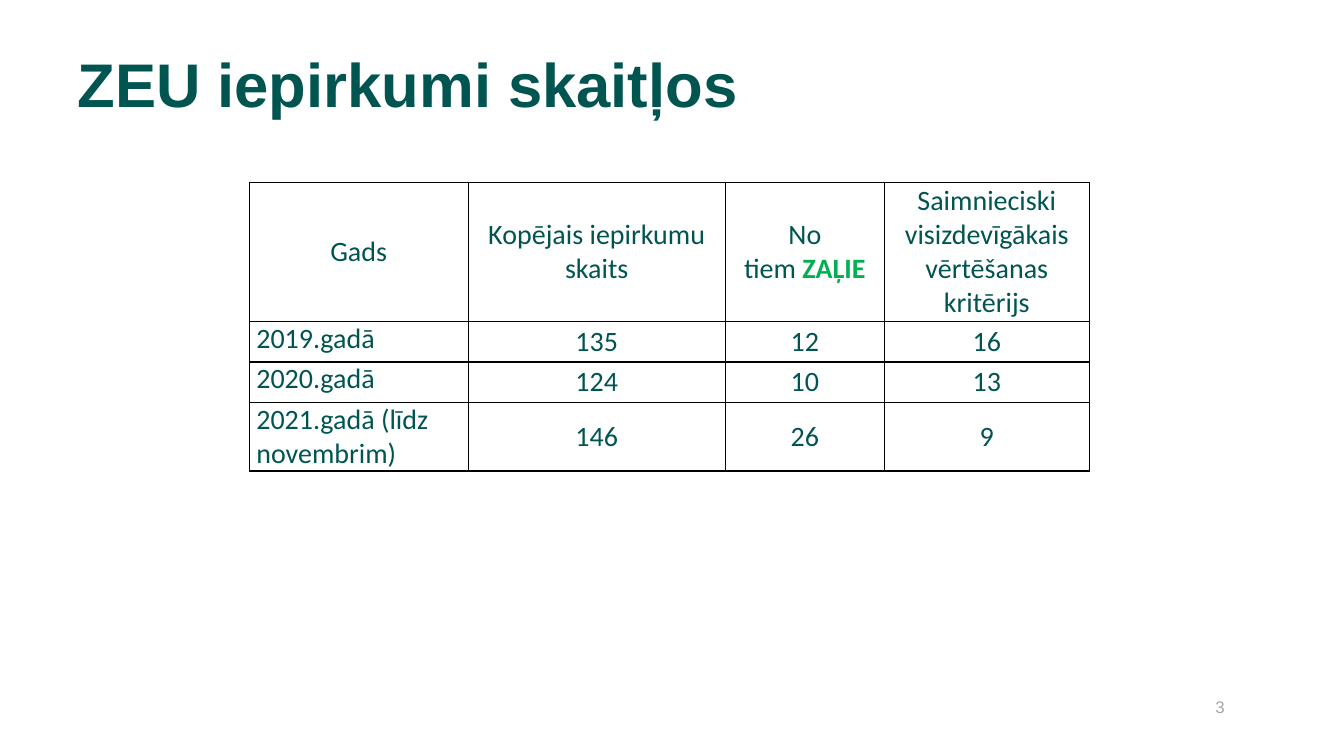
from dataclasses import dataclass

from lxml import etree
from pptx import Presentation
from pptx import util as u
from pptx.dml.color import RGBColor
from pptx.enum import text
from pptx.oxml import ns

HARD_SPACE = chr(160)


@dataclass(frozen=True)
class Theme:
    ink: str = "005551"
    accent: str = "00B050"
    muted: str = "A6A6A6"
    paper: str = "FFFFFF"
    rule: str = "000000"
    heading_font: str = "Arial"
    table_font: str = "Calibri"
    title_size: int = 44
    table_size: int = 20
    number_size: int = 12
    rule_width: int = 1


class SlideBuilder:
    def __init__(self, slide, theme):
        self.slide = slide
        self.theme = theme

    def run(self, paragraph, wording, font, size, colour, bold=False):
        run = paragraph.add_run()
        run.text = wording
        run.font.name = font
        run.font.size = u.Pt(size)
        run.font.bold = bold
        run.font.color.rgb = RGBColor.from_string(colour)

    def title(self, wording, left, top, width, height):
        heading = self.slide.shapes.title
        heading.left, heading.top = u.Cm(left), u.Cm(top)
        heading.width, heading.height = u.Cm(width), u.Cm(height)
        frame = heading.text_frame
        frame.vertical_anchor = text.MSO_ANCHOR.MIDDLE
        frame.auto_size = text.MSO_AUTO_SIZE.NONE
        paragraph = frame.paragraphs[0]
        paragraph.alignment = text.PP_ALIGN.LEFT
        self.run(paragraph, wording, self.theme.heading_font,
                 self.theme.title_size, self.theme.ink, bold=True)

    def page_number(self, wording, left, top, width, height):
        box = self.slide.shapes.add_textbox(
            u.Cm(left), u.Cm(top), u.Cm(width), u.Cm(height))
        frame = box.text_frame
        frame.word_wrap = True
        self.run(frame.paragraphs[0], wording, self.theme.heading_font,
                 self.theme.number_size, self.theme.muted)

    def borders(self, cell):
        properties = cell._tc.get_or_add_tcPr()
        for side in ("a:lnL", "a:lnR", "a:lnT", "a:lnB"):
            line = etree.SubElement(properties, ns.qn(side),
                                    w=str(u.Pt(self.theme.rule_width)))
            fill = etree.SubElement(line, ns.qn("a:solidFill"))
            etree.SubElement(fill, ns.qn("a:srgbClr"), val=self.theme.rule)

    def cell(self, cell, wording, centred, accent=""):
        self.borders(cell)
        cell.fill.solid()
        cell.fill.fore_color.rgb = RGBColor.from_string(self.theme.paper)
        cell.margin_left = cell.margin_right = u.Cm(0.18)
        cell.margin_top = cell.margin_bottom = 0
        paragraph = cell.text_frame.paragraphs[0]
        if centred:
            cell.vertical_anchor = text.MSO_ANCHOR.MIDDLE
            paragraph.alignment = text.PP_ALIGN.CENTER
        font, size = self.theme.table_font, self.theme.table_size
        self.run(paragraph, wording, font, size, self.theme.ink)
        if accent:
            self.run(paragraph, accent, font, size, self.theme.accent, bold=True)

    def table(self, rows, left, top, widths, heights, accents):
        table = self.slide.shapes.add_table(
            len(heights), len(widths), u.Cm(left), u.Cm(top),
            u.Cm(sum(widths)), u.Cm(sum(heights))).table
        table.first_row = table.horz_banding = False
        for column, width in zip(table.columns, widths):
            column.width = u.Cm(width)
        for row, height in zip(table.rows, heights):
            row.height = u.Cm(height)
        for r, row in enumerate(rows):
            for c, wording in enumerate(row):
                # Only the year labels under the header are left-aligned
                self.cell(table.cell(r, c), wording, centred=r == 0 or c > 0,
                          accent=accents.get((r, c), ""))


def main():
    deck = Presentation()
    deck.slide_width, deck.slide_height = u.Cm(33.87), u.Cm(19.05)
    builder = SlideBuilder(deck.slides.add_slide(deck.slide_layouts[5]), Theme())

    # Heading
    builder.title("ZEU iepirkumi skaitļos", 1.7, 1.02, 30.48, 2.13)

    # Procurement counts by year
    procurement = [
        ("Gads", "Kopējais iepirkumu skaits", "No tiem" + HARD_SPACE,
         "Saimnieciski visizdevīgākais vērtēšanas kritērijs"),
        ("2019.gadā", "135", "12", "16"),
        ("2020.gadā", "124", "10", "13"),
        ("2021.gadā (līdz novembrim)", "146", "26", "9"),
    ]
    builder.table(procurement, 6.28, 4.6,
                  widths=(5.52, 6.48, 4.01, 5.16),
                  heights=(3.5, 1.02, 1.02, 1.73),
                  accents={(0, 2): "ZAĻIE"})

    # Page number
    builder.page_number("3", 30.38, 17.42, 1.78, 1.02)

    deck.save("out.pptx")


if __name__ == "__main__":
    main()
